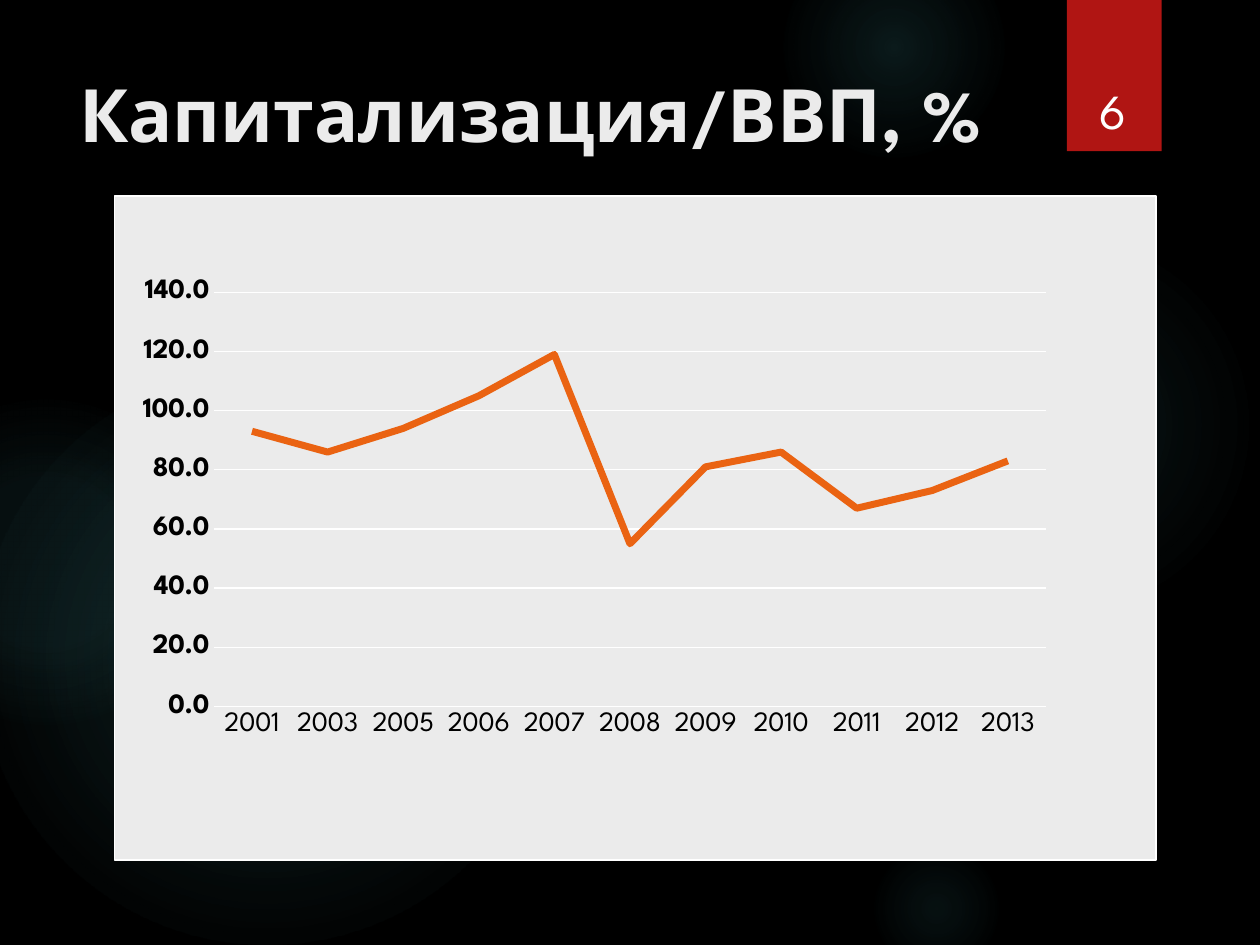
from lxml import etree
from pptx import Presentation
from pptx.chart.data import CategoryChartData
from pptx.dml.color import RGBColor
from pptx.enum.chart import XL_CHART_TYPE, XL_TICK_MARK
from pptx.enum.shapes import MSO_SHAPE
from pptx.enum.text import MSO_ANCHOR, PP_ALIGN
from pptx.oxml import parse_xml
from pptx.oxml.ns import nsdecls, qn
from pptx.util import Cm, Pt

LINE_CHART = XL_CHART_TYPE.LINE
NO_TICK = XL_TICK_MARK.NONE
ELLIPSE, RECTANGLE = MSO_SHAPE.OVAL, MSO_SHAPE.RECTANGLE
TOP, BOTTOM = MSO_ANCHOR.TOP, MSO_ANCHOR.BOTTOM
LEFT, CENTER = PP_ALIGN.LEFT, PP_ALIGN.CENTER

BLACK = RGBColor(0x00, 0x00, 0x00)
WHITE = RGBColor(0xFF, 0xFF, 0xFF)
PALE = RGBColor(0xEB, 0xEB, 0xEB)
RED = RGBColor(0xB0, 0x15, 0x13)
ORANGE = RGBColor(0xEA, 0x63, 0x12)
TEAL = RGBColor(0x50, 0xB9, 0xC1)
FONT = "League Spartan"

# left, top, diameter in cm; then (position %, opacity %) of each stop
GLOWS = [
    (17.5, 4.65, 7.82, [(0, 7), (36, 6), (69, 0)]),
    (15.8, -1.27, 4.45, [(0, 14), (36, 7), (73, 0)]),
    (17.5, 16.94, 2.74, [(0, 9), (36, 5), (66, 0)]),
    (-0.43, 7.42, 11.63, [(0, 11), (36, 10), (75, 0)]),
    (-2.34, 8.05, 6.55, [(0, 8), (36, 8), (72, 0)]),
]
CAPITALIZATION = {
    "2001": 93, "2003": 86, "2005": 94, "2006": 105, "2007": 119, "2008": 55,
    "2009": 81, "2010": 86, "2011": 67, "2012": 73, "2013": 83,
}


def add_plain_shape(slide, kind, left, top, width, height):
    shape = slide.shapes.add_shape(kind, Cm(left), Cm(top), Cm(width), Cm(height))
    shape.shadow.inherit = False
    shape.line.fill.background()
    return shape


def add_glow(slide, left, top, diameter, stops):
    """Radial gradient that fades out from the centre."""
    glow = add_plain_shape(slide, ELLIPSE, left, top, diameter, diameter)
    stop_xml = "".join(
        f'<a:gs pos="{position * 1000}"><a:srgbClr val="{TEAL}">'
        f'<a:alpha val="{opacity * 1000}"/></a:srgbClr></a:gs>'
        for position, opacity in stops)
    gradient = parse_xml(
        f'<a:gradFill {nsdecls("a")} rotWithShape="1"><a:gsLst>{stop_xml}</a:gsLst>'
        '<a:path path="circle"><a:fillToRect l="50000" t="50000" r="50000" b="50000"/>'
        '</a:path></a:gradFill>')
    glow.element.spPr.find(qn("a:prstGeom")).addnext(gradient)


def add_text(slide, text, box, size, color, bold=False, align=LEFT, anchor=TOP):
    frame = slide.shapes.add_textbox(*(Cm(length) for length in box)).text_frame
    frame.word_wrap = True
    frame.vertical_anchor = anchor
    frame.text = text
    paragraph = frame.paragraphs[0]
    paragraph.alignment = align
    font = paragraph.runs[0].font
    font.name, font.size, font.bold = FONT, Pt(size), bold
    font.color.rgb = color


def add_page_tag(slide, number, left, top, width, height):
    tag = add_plain_shape(slide, RECTANGLE, left, top, width, height)
    tag.fill.solid()
    tag.fill.fore_color.rgb = RED
    shadow = parse_xml(
        f'<a:outerShdw {nsdecls("a")} blurRad="{Pt(3)}" dist="{Pt(2)}" dir="5400000" '
        f'rotWithShape="0"><a:srgbClr val="{BLACK}"><a:alpha val="45000"/></a:srgbClr>'
        '</a:outerShdw>')
    tag.element.spPr.find(qn("a:effectLst")).append(shadow)
    add_text(slide, number, (left + 0.05, top + 0.81, width - 0.16, 2.13),
             28, WHITE, align=CENTER, anchor=BOTTOM)


def style_line(line, color, width):
    line.color.rgb = color
    line.width = Pt(width)


def set_chart_panel(chart):
    """Fill and outline the chart area, and fix the inner plot area."""
    panel = parse_xml(
        f'<c:spPr {nsdecls("c", "a")}><a:solidFill><a:srgbClr val="{PALE}"/></a:solidFill>'
        f'<a:ln w="{Pt(0.75)}"><a:solidFill><a:srgbClr val="{WHITE}"/></a:solidFill></a:ln>'
        '</c:spPr>')
    chart_node = chart.element.find(qn("c:chart"))
    chart_node.addnext(panel)

    plot_area = chart_node.find(qn("c:plotArea"))
    for old_layout in plot_area.findall(qn("c:layout")):
        plot_area.remove(old_layout)
    layout = etree.Element(qn("c:layout"))
    manual = etree.SubElement(layout, qn("c:manualLayout"))
    settings = {"layoutTarget": "inner", "xMode": "edge", "yMode": "edge",
                "x": 0.096, "y": 0.145, "w": 0.798, "h": 0.624}
    for key, value in settings.items():
        etree.SubElement(manual, qn(f"c:{key}")).set("val", str(value))
    plot_area.insert(0, layout)


def add_capitalization_chart(slide, left, top, width, height):
    data = CategoryChartData(number_format="0.0")
    data.categories = list(CAPITALIZATION)
    data.add_series("Series 1", list(CAPITALIZATION.values()))
    chart = slide.shapes.add_chart(
        LINE_CHART, Cm(left), Cm(top), Cm(width), Cm(height), data).chart
    chart.has_legend = False
    chart.has_title = False
    chart.font.name, chart.font.size = FONT, Pt(16)
    chart.font.color.rgb = BLACK

    plot = chart.plots[0]
    plot.vary_by_categories = False
    series = plot.series[0]
    series.smooth = False
    style_line(series.format.line, ORANGE, 4)

    years, percent = chart.category_axis, chart.value_axis
    for axis in (years, percent):
        axis.major_tick_mark = axis.minor_tick_mark = NO_TICK
    style_line(years.format.line, WHITE, 0.75)
    percent.minimum_scale, percent.maximum_scale, percent.major_unit = 0, 140, 20
    percent.format.line.fill.background()
    style_line(percent.major_gridlines.format.line, WHITE, 0.75)
    labels = percent.tick_labels
    labels.number_format, labels.number_format_is_linked = "0.0", False
    labels.font.name, labels.font.size, labels.font.bold = FONT, Pt(16), True
    labels.font.color.rgb = BLACK
    set_chart_panel(chart)


def main():
    presentation = Presentation()
    presentation.slide_width, presentation.slide_height = Cm(25.4), Cm(19.05)
    slide = presentation.slides.add_slide(presentation.slide_layouts[6])
    slide.background.fill.solid()
    slide.background.fill.fore_color.rgb = BLACK
    for glow in GLOWS:
        add_glow(slide, *glow)
    add_text(slide, "Капитализация/ВВП, %", (1.35, 1.27, 19.61, 3.89), 42, PALE, bold=True)
    add_capitalization_chart(slide, 2.29, 3.94, 21.03, 13.41)
    add_page_tag(slide, "6", 21.51, 0, 1.91, 3.05)
    presentation.save("out.pptx")


if __name__ == "__main__":
    main()
